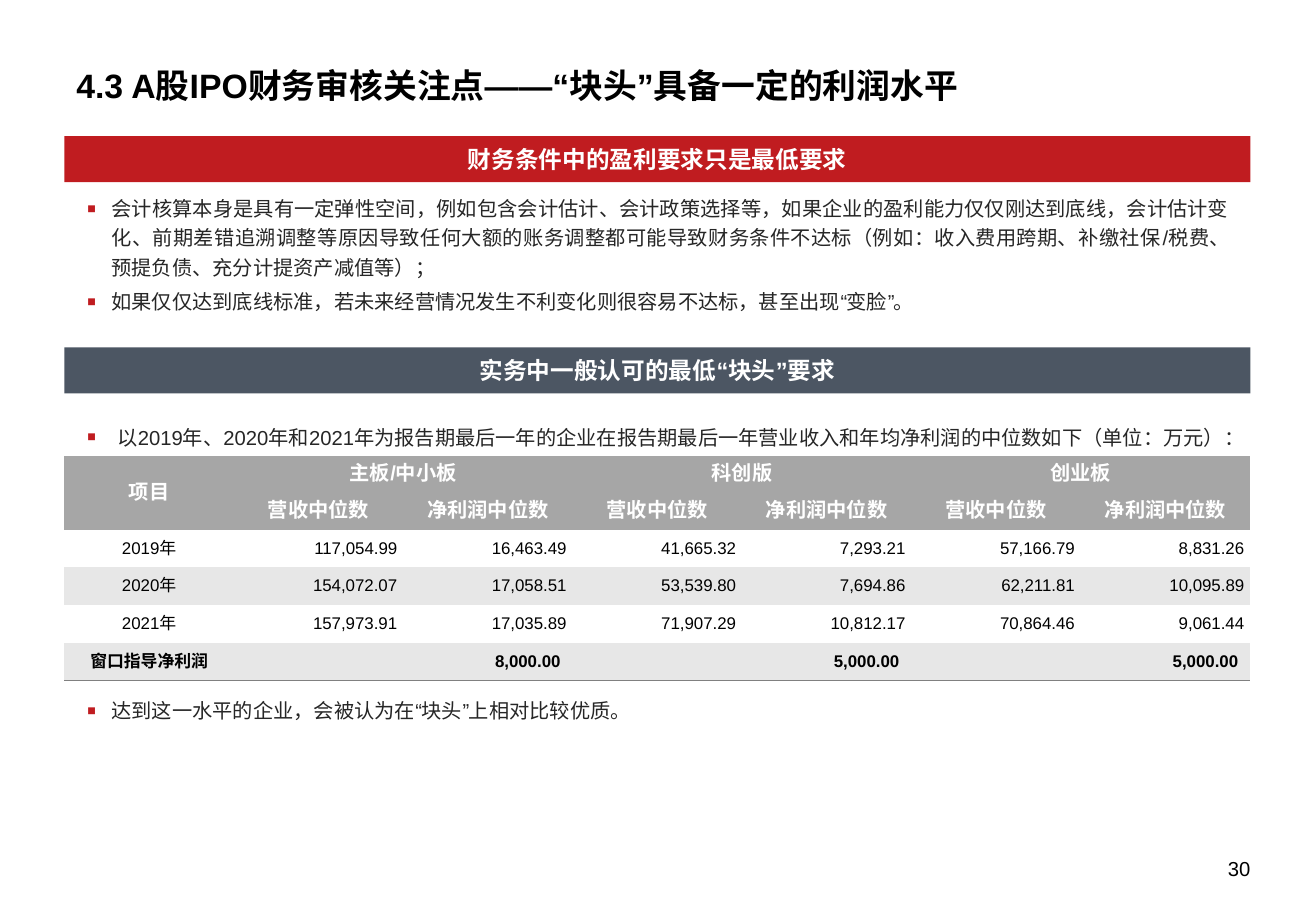
import pptx
import pptx.util
import pptx.dml.color
import pptx.enum.lang
import pptx.enum.shapes
import pptx.enum.text
import pptx.oxml
import pptx.oxml.ns
from lxml import etree

Inches = pptx.util.Inches
Pt = pptx.util.Pt
RGBColor = pptx.dml.color.RGBColor
ALIGN = pptx.enum.text.PP_ALIGN
ANCHOR = pptx.enum.text.MSO_ANCHOR
qn = pptx.oxml.ns.qn

BLACK = RGBColor(0x00, 0x00, 0x00)
WHITE = RGBColor(0xFF, 0xFF, 0xFF)
RED = RGBColor(0xC0, 0x1C, 0x20)
SLATE = RGBColor(0x4C, 0x56, 0x63)
INK = RGBColor(0x26, 0x26, 0x26)
HEADER_GREY = RGBColor(0xA6, 0xA6, 0xA6)
BAND_GREY = RGBColor(0xE7, 0xE7, 0xE7)
RULE_GREY = RGBColor(0x80, 0x80, 0x80)

LEFT, WIDTH = 0.53, 9.76


def add_run(p, text, size, color, bold=False):
    r = p.add_run()
    r.text = text
    r.font.size = Pt(size)
    r.font.bold = bold
    r.font.name = "Arial"
    r.font.color.rgb = color
    r.font.language_id = pptx.enum.lang.MSO_LANGUAGE_ID.SIMPLIFIED_CHINESE
    latin = r.font._element.find(qn("a:latin"))
    latin.addnext(latin.makeelement(qn("a:ea"), {"typeface": "Arial"}))


def add_box(s, left, top, width, height, margin_x, margin_y, anchor):
    tf = s.shapes.add_textbox(Inches(left), Inches(top), Inches(width), Inches(height)).text_frame
    tf.word_wrap = True
    tf.margin_left = tf.margin_right = Inches(margin_x)
    tf.margin_top = tf.margin_bottom = Inches(margin_y)
    tf.vertical_anchor = anchor
    return tf


prs = pptx.Presentation()
prs.slide_width, prs.slide_height = Inches(10.83), Inches(7.5)
s = prs.slides.add_slide(prs.slide_layouts[6])

# Title and page number
tf = add_box(s, LEFT, 0.1, 10.3, 0.77, 0.1, 0, ANCHOR.BOTTOM)
add_run(tf.paragraphs[0], "4.3 A股IPO财务审核关注点——“块头”具备一定的利润水平", 20, BLACK, True)

tf = add_box(s, 9.8, 7.03, 0.49, 0.22, 0, 0, ANCHOR.BOTTOM)
tf.paragraphs[0].alignment = ALIGN.RIGHT
add_run(tf.paragraphs[0], "30", 12, BLACK)

# Section banners
for top, color, text in [
    (1.12, RED, "财务条件中的盈利要求只是最低要求"),
    (2.86, SLATE, "实务中一般认可的最低“块头”要求"),
]:
    sp = s.shapes.add_shape(pptx.enum.shapes.MSO_SHAPE.RECTANGLE,
                            Inches(LEFT), Inches(top), Inches(WIDTH), Inches(0.38))
    sp.shadow.inherit = False
    sp.fill.solid()
    sp.fill.fore_color.rgb = color
    sp.line.fill.background()
    sp.text_frame.vertical_anchor = ANCHOR.MIDDLE
    p = sp.text_frame.paragraphs[0]
    p.alignment = ALIGN.CENTER
    add_run(p, text, 14, WHITE, True)

# Bulleted text: top, width, height, indent, paragraphs
bullet_boxes = [
    (1.53, 9.6, 1.09, 0.2, [
        "会计核算本身是具有一定弹性空间，例如包含会计估计、会计政策选择等，如果企业的盈利能力仅仅刚达到底线，"
        "会计估计变化、前期差错追溯调整等原因导致任何大额的账务调整都可能导致财务条件不达标"
        "（例如：收入费用跨期、补缴社保/税费、预提负债、充分计提资产减值等）；",
        "如果仅仅达到底线标准，若未来经营情况发生不利变化则很容易不达标，甚至出现“变脸”。",
    ]),
    (3.41, 10.03, 0.34, 0.25, [
        "以2019年、2020年和2021年为报告期最后一年的企业在报告期最后一年营业收入和年均净利润的中位数如下（单位：万元）：",
    ]),
    (5.66, 10.03, 0.34, 0.2, ["达到这一水平的企业，会被认为在“块头”上相对比较优质。"]),
]
for top, width, height, indent, texts in bullet_boxes:
    tf = add_box(s, 0.62, top, width, height, 0.1, 0.05, ANCHOR.TOP)
    for i, text in enumerate(texts):
        p = tf.add_paragraph() if i else tf.paragraphs[0]
        p.alignment = ALIGN.JUSTIFY
        p.line_spacing = 1.2
        p.space_before = Pt(3 if i else 0)
        pPr = p._p.get_or_add_pPr()
        pPr.set("marL", str(Inches(indent)))
        pPr.set("indent", str(-Inches(indent)))
        color = etree.SubElement(pPr, qn("a:buClr"))
        etree.SubElement(color, qn("a:srgbClr"), val=str(RED))
        etree.SubElement(pPr, qn("a:buSzPct"), val="70000")
        etree.SubElement(pPr, qn("a:buFont"), typeface="Arial")
        etree.SubElement(pPr, qn("a:buChar"), char="■")
        add_run(p, text, 12, INK)

# Table of medians
rows = [
    ["项目", "主板/中小板", "", "科创版", "", "创业板", ""],
    [""] + ["营收中位数", "净利润中位数"] * 3,
    ["2019年", "117,054.99", "16,463.49", "41,665.32", "7,293.21", "57,166.79", "8,831.26"],
    ["2020年", "154,072.07", "17,058.51", "53,539.80", "7,694.86", "62,211.81", "10,095.89"],
    ["2021年", "157,973.91", "17,035.89", "71,907.29", "10,812.17", "70,864.46", "9,061.44"],
    ["窗口指导净利润", "", "8,000.00", "", "5,000.00", "", "5,000.00"],
]
LAST = len(rows) - 1
frame = s.shapes.add_table(len(rows), 7, Inches(LEFT), Inches(3.75), Inches(WIDTH), Inches(1.88))
table = frame.table
table.first_row = table.horz_banding = False
# Plain table style without grid lines
table._tbl.tblPr.find(qn("a:tableStyleId")).text = "{2D5ABB26-0587-4C30-8999-92F81FD0307C}"
for i, row in enumerate(table.rows):
    row.height = Inches(0.31 if i else 0)
frame.height = Inches(1.88)

table.cell(0, 0).merge(table.cell(1, 0))
for col in (1, 3, 5):
    table.cell(0, col).merge(table.cell(0, col + 1))

for i, row in enumerate(rows):
    header = i < 2
    for j, text in enumerate(row):
        cell = table.cell(i, j)
        number = j > 0 and not header
        cell.vertical_anchor = ANCHOR.MIDDLE
        cell.margin_left = cell.margin_right = Inches(0.05 if number and i < LAST else 0.1)
        cell.margin_top = cell.margin_bottom = Inches(0.05 if header else 0)
        cell.fill.solid()
        cell.fill.fore_color.rgb = HEADER_GREY if header else BAND_GREY if i % 2 else WHITE
        p = cell.text_frame.paragraphs[0]
        p.alignment = ALIGN.RIGHT if number else ALIGN.CENTER
        if text:
            add_run(p, text, 12 if header else 10, WHITE if header else BLACK, header or i == LAST)
        if i == LAST:
            line = etree.Element(qn("a:lnB"), w=str(Pt(0.75)))
            fill = etree.SubElement(line, qn("a:solidFill"))
            etree.SubElement(fill, qn("a:srgbClr"), val=str(RULE_GREY))
            cell._tc.tcPr.insert(0, line)

prs.save("out.pptx")
